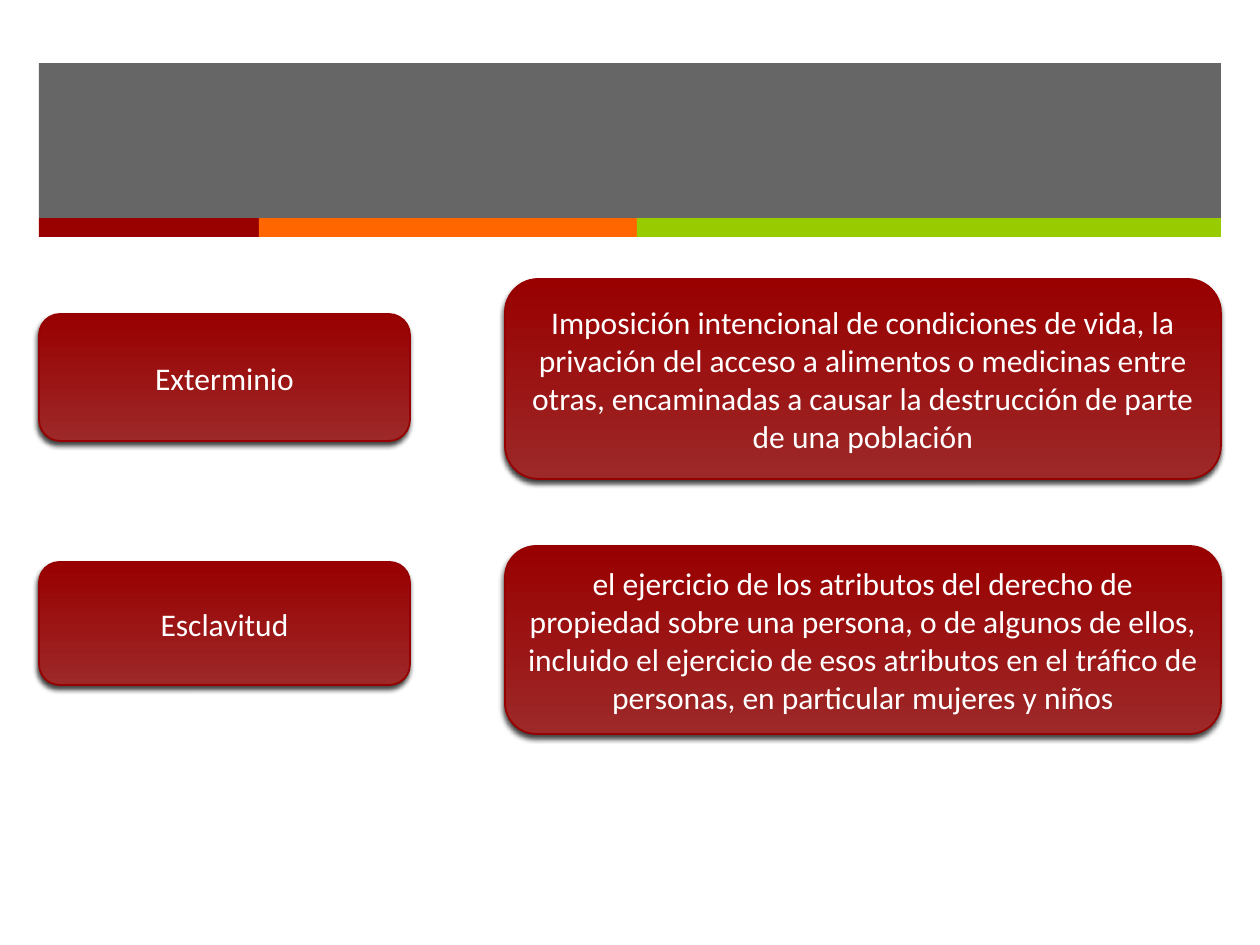
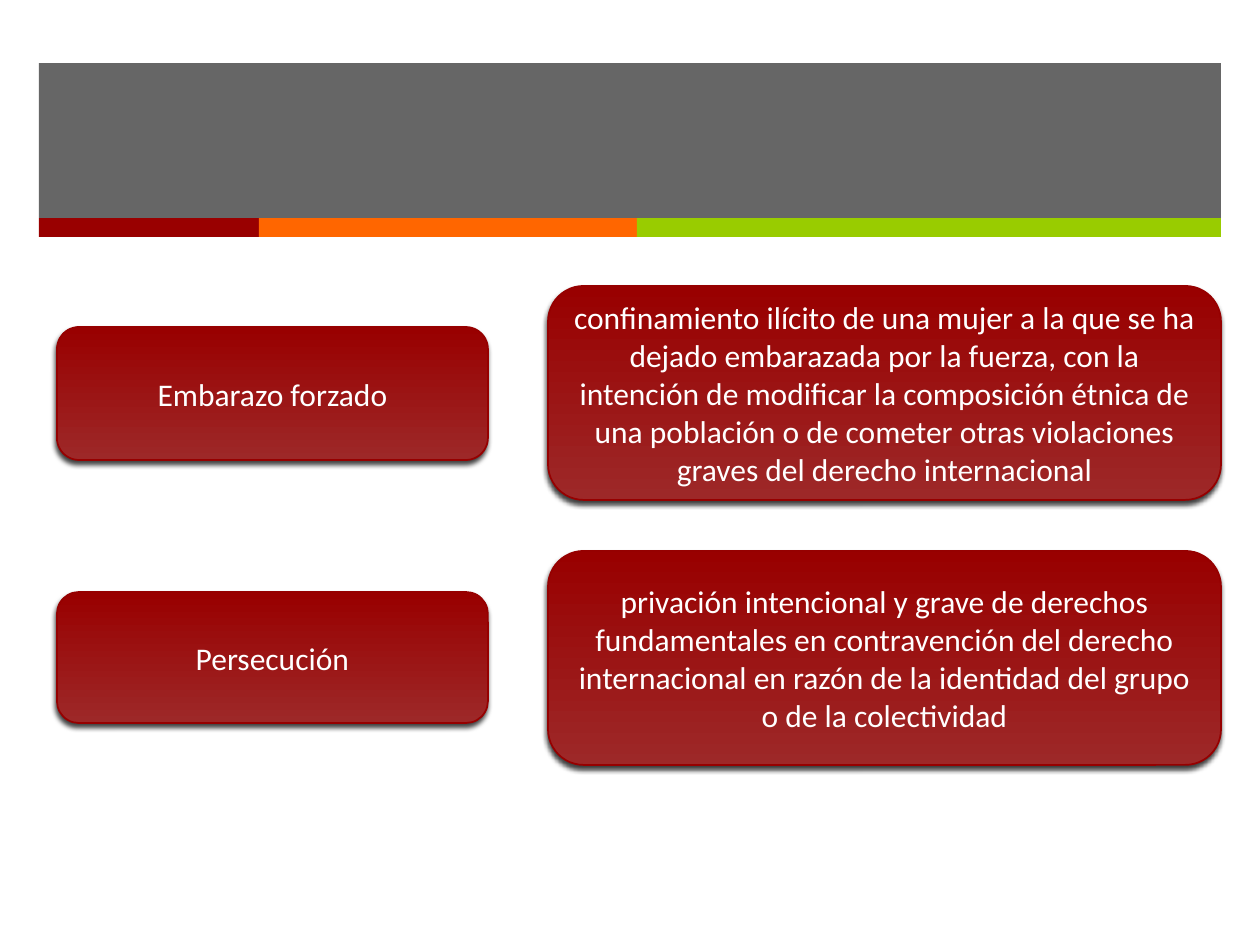
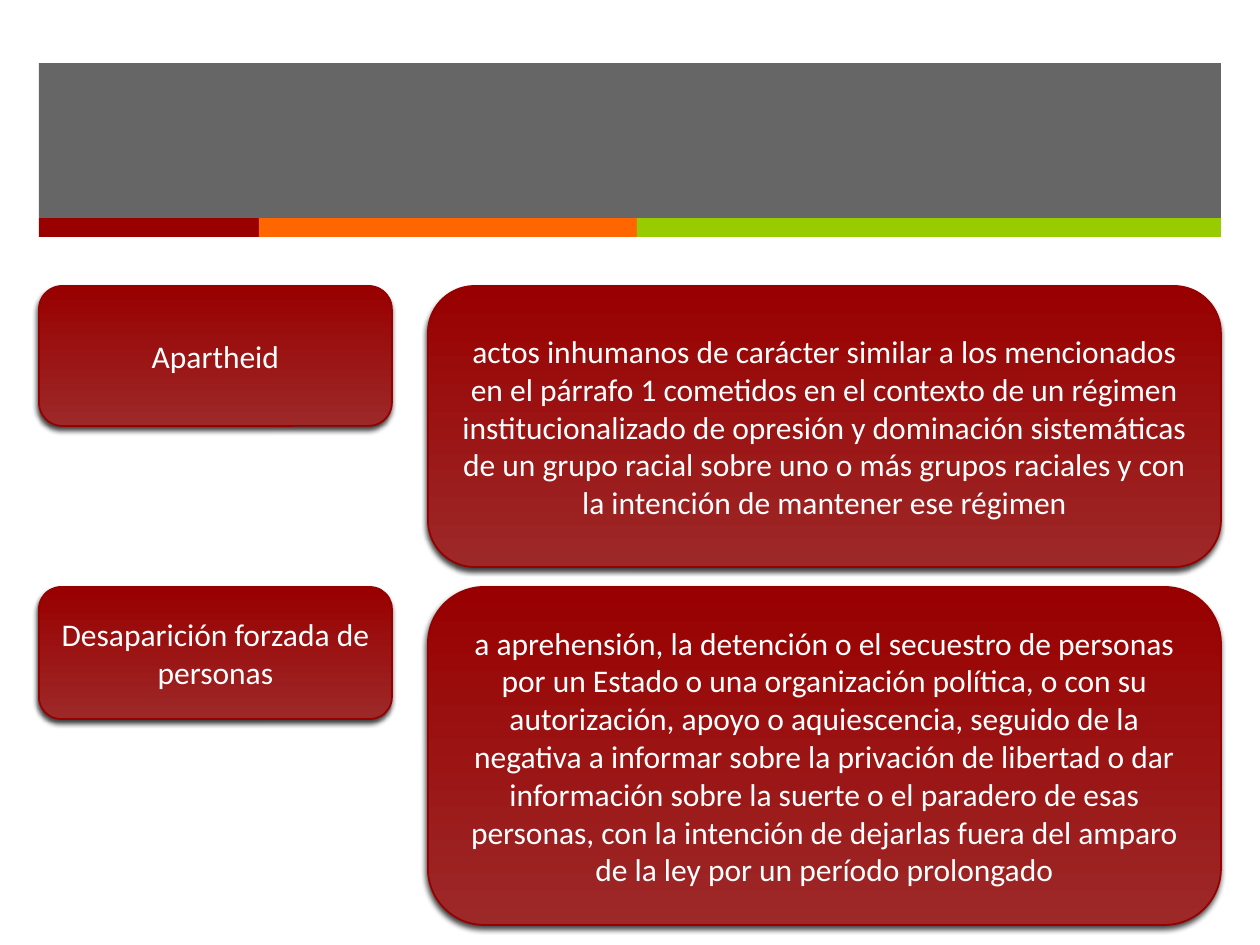
from collections import namedtuple

from lxml.etree import SubElement
from pptx import Presentation
from pptx.dml.color import RGBColor
from pptx.enum.shapes import MSO_SHAPE
from pptx.enum.text import MSO_ANCHOR, PP_ALIGN
from pptx.oxml.ns import qn
from pptx.util import Emu, Inches, Pt

EMU_PER_PX = 914400 / 126
LEFT, RIGHT = 39, 1221
BLANK_LAYOUT = 6

CHARCOAL = RGBColor(0x26, 0x26, 0x26)
RED = RGBColor(0x99, 0x00, 0x00)
LIGHT_RED = RGBColor(0x9D, 0x28, 0x28)
OUTLINE_RED = RGBColor(0x96, 0x00, 0x00)
ORANGE = RGBColor(0xFF, 0x66, 0x00)
GREEN = RGBColor(0x99, 0xCC, 0x00)
WHITE = RGBColor(0xFF, 0xFF, 0xFF)

STRIPES = [(220, RED), (378, ORANGE), (584, GREEN)]

Box = namedtuple("Box", "left top width height")
# Each span is the (top, height) of a card.
Entry = namedtuple("Entry", "term term_span definition definition_span")
# The terms column has a left edge and a width; definitions run to RIGHT.
Page = namedtuple("Page", "term_left term_width definition_left entries")

PAGES = [
    Page(39, 371, 505, [
        Entry("Exterminio", (314, 127),
              "Imposición intencional de condiciones de vida, la privación del acceso a "
              "alimentos o medicinas entre otras, encaminadas a causar la destrucción de "
              "parte de una población", (279, 200)),
        Entry("Esclavitud", (562, 123),
              "el ejercicio de los atributos del derecho de propiedad sobre una persona, "
              "o de algunos de ellos, incluido el ejercicio de esos atributos en el "
              "tráfico de personas, en particular mujeres y niños", (546, 188)),
    ]),
    Page(57, 431, 548, [
        Entry("Embarazo forzado", (327, 133),
              "confinamiento ilícito de una mujer a la que se ha dejado embarazada por "
              "la fuerza, con la intención de modificar la composición étnica de una "
              "población o de cometer otras violaciones graves del derecho "
              "internacional", (286, 214)),
        Entry("Persecución", (592, 131),
              "privación intencional y grave de derechos fundamentales en contravención "
              "del derecho internacional en razón de la identidad del grupo o de la "
              "colectividad", (551, 214)),
    ]),
    Page(39, 353, 428, [
        Entry("Apartheid", (286, 140),
              "actos inhumanos de carácter similar a los mencionados en el párrafo 1 "
              "cometidos en el contexto de un régimen institucionalizado de opresión y "
              "dominación sistemáticas de un grupo racial sobre uno o más grupos "
              "raciales y con la intención de mantener ese régimen", (286, 281)),
        Entry("Desaparición forzada de personas", (587, 132),
              "a aprehensión, la detención o el secuestro de personas por un Estado o "
              "una organización política, o con su autorización, apoyo o aquiescencia, "
              "seguido de la negativa a informar sobre la privación de libertad o dar "
              "información sobre la suerte o el paradero de esas personas, con la "
              "intención de dejarlas fuera del amparo de la ley por un período "
              "prolongado", (587, 338)),
    ]),
]


def px(length):
    return Emu(round(length * EMU_PER_PX))


def add_block(shapes, box, color, opacity=100):
    """Add a flat rectangle without an outline."""
    block = shapes.add_shape(MSO_SHAPE.RECTANGLE, *map(px, box))
    block.shadow.inherit = False
    block.fill.solid()
    block.fill.fore_color.rgb = color
    block.line.fill.background()
    if opacity < 100:
        color_node = block._element.spPr.find(qn("a:solidFill"))[0]
        SubElement(color_node, qn("a:alpha"), val=str(opacity * 1000))


def add_header(page, box, stripe_height=19):
    """Add the grey band with the row of coloured stripes along its lower edge."""
    add_block(page.shapes, box, CHARCOAL, opacity=70)
    stripes = page.shapes.add_group_shape().shapes
    left = box.left
    for width, color in STRIPES:
        add_block(stripes, Box(left, box.top + box.height, width, stripe_height), color)
        left += width


def add_shadow(shape, blur, distance, angle, opacity):
    shape.shadow.inherit = False
    effects = shape._element.spPr.find(qn("a:effectLst"))
    shadow = SubElement(effects, qn("a:outerShdw"), blurRad=str(Pt(blur)),
                        dist=str(Pt(distance)), dir=str(angle * 60000), rotWithShape="0")
    color = SubElement(shadow, qn("a:srgbClr"), val="000000")
    SubElement(color, qn("a:alpha"), val=str(opacity * 1000))


def write_text(shape, text, *, font="Calibri", size=18, color=WHITE,
               align=PP_ALIGN.CENTER, anchor=MSO_ANCHOR.MIDDLE):
    frame = shape.text_frame
    frame.word_wrap = True
    frame.vertical_anchor = anchor
    para = frame.paragraphs[0]
    para.alignment = align
    span = para.add_run()
    span.text = text
    span.font.name = font
    span.font.size = Pt(size)
    span.font.color.rgb = color


def add_card(page, box, text):
    card = page.shapes.add_shape(MSO_SHAPE.ROUNDED_RECTANGLE, *map(px, box))
    card.fill.gradient()
    card.fill.gradient_angle = 90
    for stop, color in zip(card.fill.gradient_stops, (LIGHT_RED, RED)):
        stop.color.rgb = color
    card.line.color.rgb = OUTLINE_RED
    card.line.width = Pt(1)
    add_shadow(card, blur=3, distance=2, angle=110, opacity=75)
    write_text(card, text)


def add_definitions_page(deck, content):
    page = deck.slides.add_slide(deck.slide_layouts[BLANK_LAYOUT])
    add_header(page, Box(LEFT, 63, RIGHT - LEFT, 155))
    definition_width = RIGHT - content.definition_left
    for entry in content.entries:
        add_card(page, Box(content.term_left, entry.term_span[0],
                           content.term_width, entry.term_span[1]), entry.term)
        add_card(page, Box(content.definition_left, entry.definition_span[0],
                           definition_width, entry.definition_span[1]), entry.definition)


def main():
    deck = Presentation()
    deck.slide_width, deck.slide_height = Inches(10), Inches(7.5)
    for content in PAGES:
        add_definitions_page(deck, content)
    deck.save("out.pptx")


if __name__ == "__main__":
    main()
